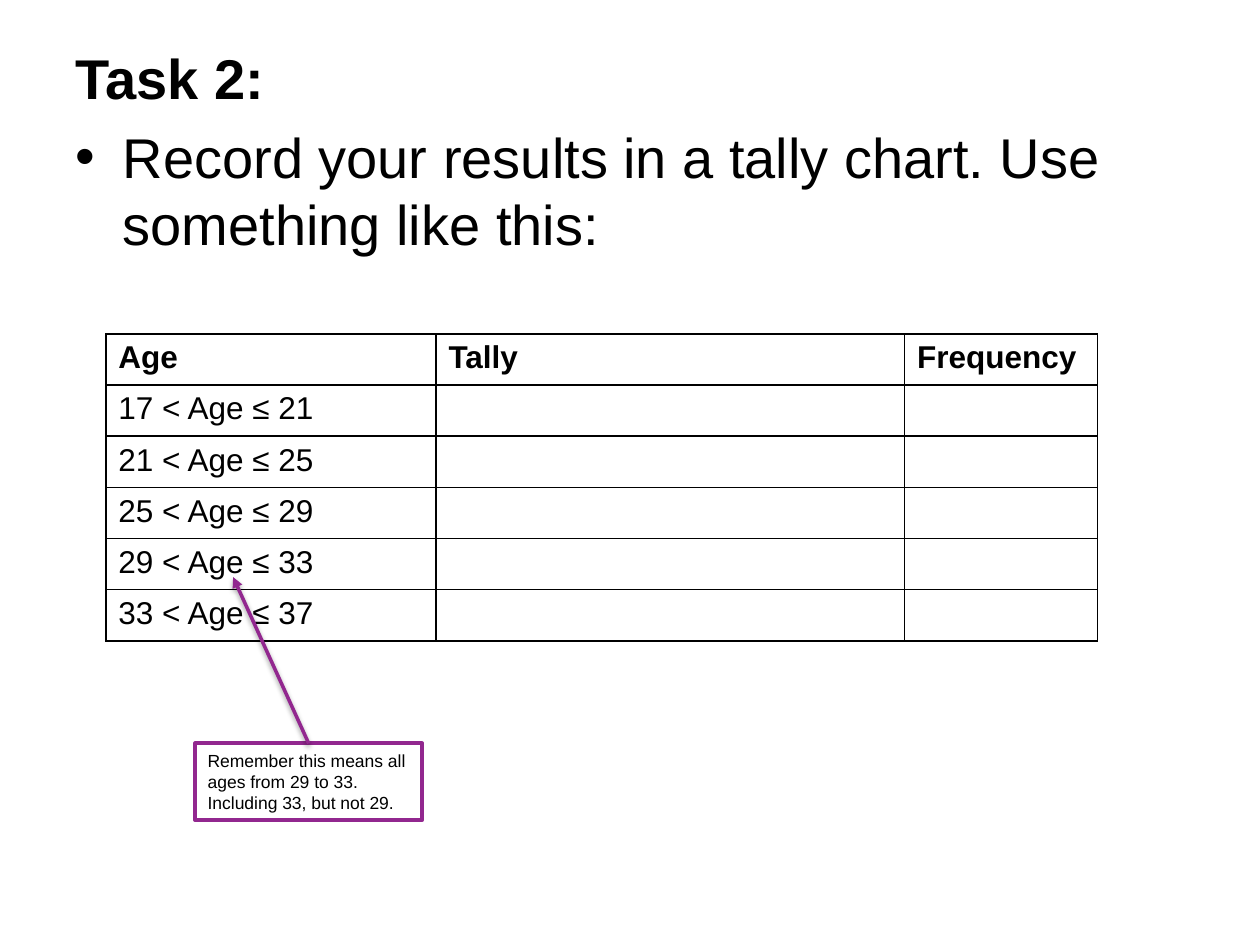
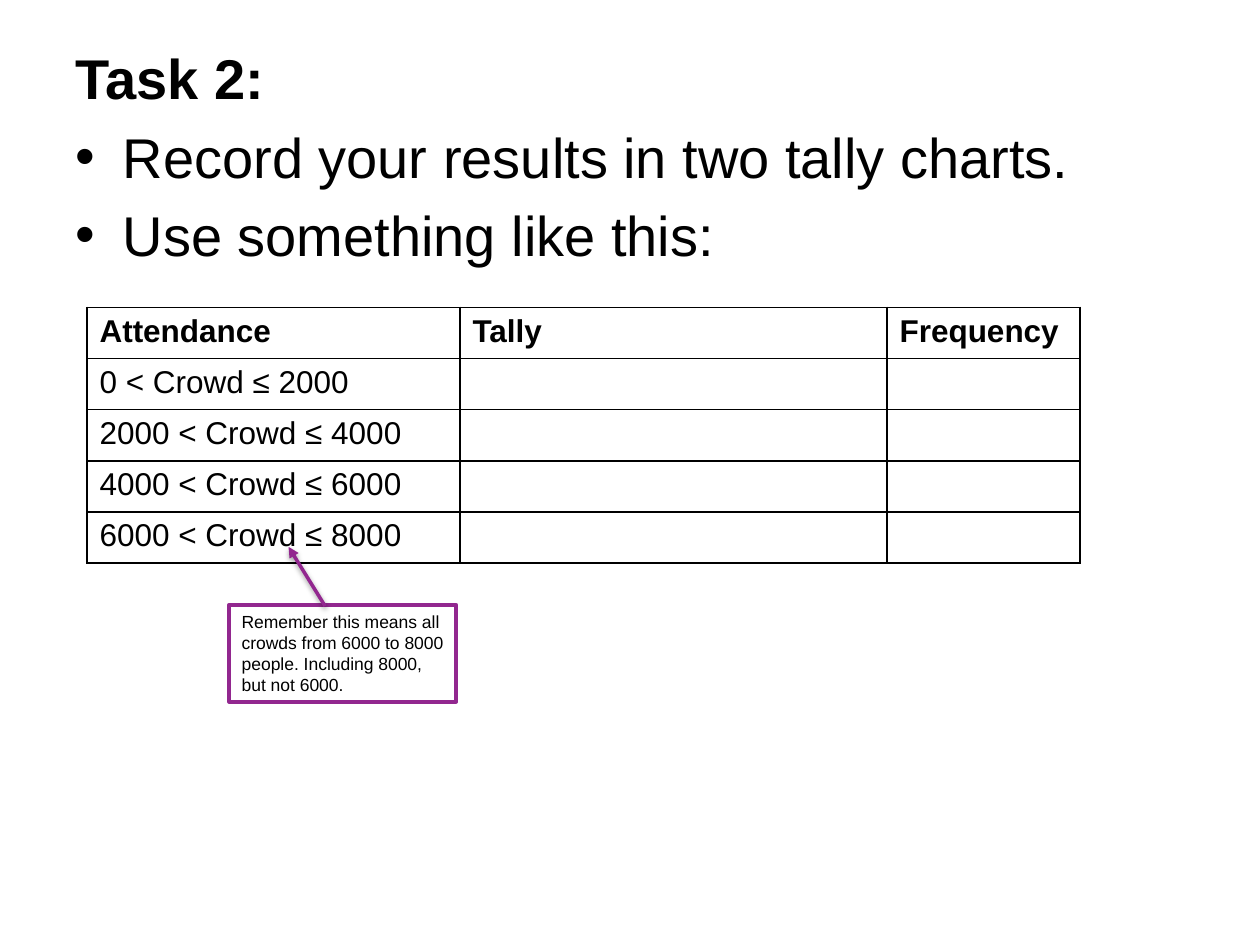
"""Build two worksheet slides, each with a tally chart and a reminder callout."""
from dataclasses import dataclass

from lxml import etree
from pptx import Presentation
from pptx.dml.color import RGBColor
from pptx.enum.shapes import MSO_CONNECTOR, MSO_SHAPE
from pptx.enum.text import MSO_ANCHOR, MSO_AUTO_SIZE, PP_ALIGN
from pptx.oxml.ns import qn
from pptx.util import Inches, Pt

STRAIGHT = MSO_CONNECTOR.STRAIGHT
RECTANGLE = MSO_SHAPE.RECTANGLE
TOP = MSO_ANCHOR.TOP
LEFT = PP_ALIGN.LEFT
GROW = MSO_AUTO_SIZE.SHAPE_TO_FIT_TEXT


@dataclass(frozen=True)
class Theme:
    font: str = "Arial"
    ink: RGBColor = RGBColor(0x00, 0x00, 0x00)
    accent: RGBColor = RGBColor(0x92, 0x27, 0x8F)
    body_size: Pt = Pt(32)
    table_size: Pt = Pt(18)
    note_size: Pt = Pt(10)
    body_gap: Pt = Pt(6.4)
    border: Pt = Pt(1)
    note_line: Pt = Pt(2.25)
    arrow_line: Pt = Pt(2)


THEME = Theme()
TASKS = [
    {
        "bullets": ["Record your results in a tally chart. Use something like this:"],
        "heading": "Age",
        "classes": [f"{low} < Age ≤ {low + 4}" for low in range(17, 37, 4)],
        "table_at": (8.4, 26.5),
        "columns": (26.2, 37.2, 15.3),
        "note": "Remember this means all ages from 29 to 33. Including 33, but not 29.",
        "note_at": (15.5, 59, 18, 6.1),
        "arrow": (24.5, 59, 18.5, 45.8),
    },
    {
        "bullets": ["Record your results in two tally charts.", "Use something like this:"],
        "heading": "Attendance",
        "classes": [f"{low} < Crowd ≤ {low + 2000}" for low in range(0, 8000, 2000)],
        "table_at": (6.9, 24.4),
        "columns": (29.6, 33.9, 15.3),
        "note": "Remember this means all crowds from 6000 to 8000 people. Including 8000, but not 6000.",
        "note_at": (18.2, 48, 18, 7.7),
        "arrow": (25.8, 48.1, 22.9, 43.4),
    },
]


def add_span(para, text, size, bold=False):
    span = para.add_run()
    span.text = text
    span.font.name = THEME.font
    span.font.size = size
    span.font.bold = bold
    span.font.color.rgb = THEME.ink


def add_xml(parent, tag, **attributes):
    return etree.SubElement(parent, qn(tag), {name: str(value) for name, value in attributes.items()})


deck = Presentation()
deck.slide_width = Inches(10)
deck.slide_height = Inches(7.5)
column = deck.slide_width // 100
row = deck.slide_height // 75
row_height = int(4.06 * row)
indent = Inches(0.375)

for task in TASKS:
    page = deck.slides.add_slide(deck.slide_layouts[6])

    body = page.shapes.add_textbox(5 * column, 3 * row, int(89.9 * column), int(63.7 * row))
    frame = body.text_frame
    frame.word_wrap = True
    add_span(frame.paragraphs[0], "Task 2:", THEME.body_size, bold=True)
    for bullet in task["bullets"]:
        para = frame.add_paragraph()
        para.space_before = THEME.body_gap
        properties = para._p.get_or_add_pPr()
        properties.set("marL", str(indent))
        properties.set("indent", str(-indent))
        add_xml(properties, "a:buFont", typeface=THEME.font)
        add_xml(properties, "a:buChar", char="•")
        add_span(para, bullet, THEME.body_size)

    headings = [task["heading"], "Tally", "Frequency"]
    entries = [headings] + [[interval, "", ""] for interval in task["classes"]]
    left, top = task["table_at"]
    widths = [int(share * column) for share in task["columns"]]
    table = page.shapes.add_table(
        len(entries), len(headings), int(left * column), int(top * row),
        sum(widths), row_height * len(entries),
    ).table
    table.first_row = False
    table.horz_banding = False
    for table_column, width in zip(table.columns, widths):
        table_column.width = width
    for row_number, texts in enumerate(entries):
        table.rows[row_number].height = row_height
        for column_number, text in enumerate(texts):
            cell = table.cell(row_number, column_number)
            cell_properties = cell._tc.get_or_add_tcPr()
            for side in ("a:lnL", "a:lnR", "a:lnT", "a:lnB"):
                edge = add_xml(cell_properties, side, w=THEME.border)
                add_xml(add_xml(edge, "a:solidFill"), "a:srgbClr", val=THEME.ink)
            cell.fill.background()
            if text:
                add_span(cell.text_frame.paragraphs[0], text, THEME.table_size, bold=row_number == 0)

    left, top, width, height = task["note_at"]
    note = page.shapes.add_shape(
        RECTANGLE, int(left * column), int(top * row), int(width * column), int(height * row)
    )
    note.shadow.inherit = False
    note.fill.background()
    note.line.color.rgb = THEME.accent
    note.line.width = THEME.note_line
    frame = note.text_frame
    frame.word_wrap = True
    frame.auto_size = GROW
    frame.vertical_anchor = TOP
    frame.paragraphs[0].alignment = LEFT
    add_span(frame.paragraphs[0], task["note"], THEME.note_size)

    start_x, start_y, end_x, end_y = task["arrow"]
    arrow = page.shapes.add_connector(
        STRAIGHT, int(start_x * column), int(start_y * row), int(end_x * column), int(end_y * row)
    )
    arrow.line.color.rgb = THEME.accent
    arrow.line.width = THEME.arrow_line
    add_xml(arrow.line._get_or_add_ln(), "a:tailEnd", type="triangle")
    effects = add_xml(arrow._element.spPr, "a:effectLst")
    shadow = add_xml(
        effects, "a:outerShdw", blurRad=Pt(3.1), dist=Pt(1.6), dir=90 * 60000, rotWithShape=0
    )
    add_xml(add_xml(shadow, "a:srgbClr", val=THEME.ink), "a:alpha", val=38000)

deck.save("out.pptx")
